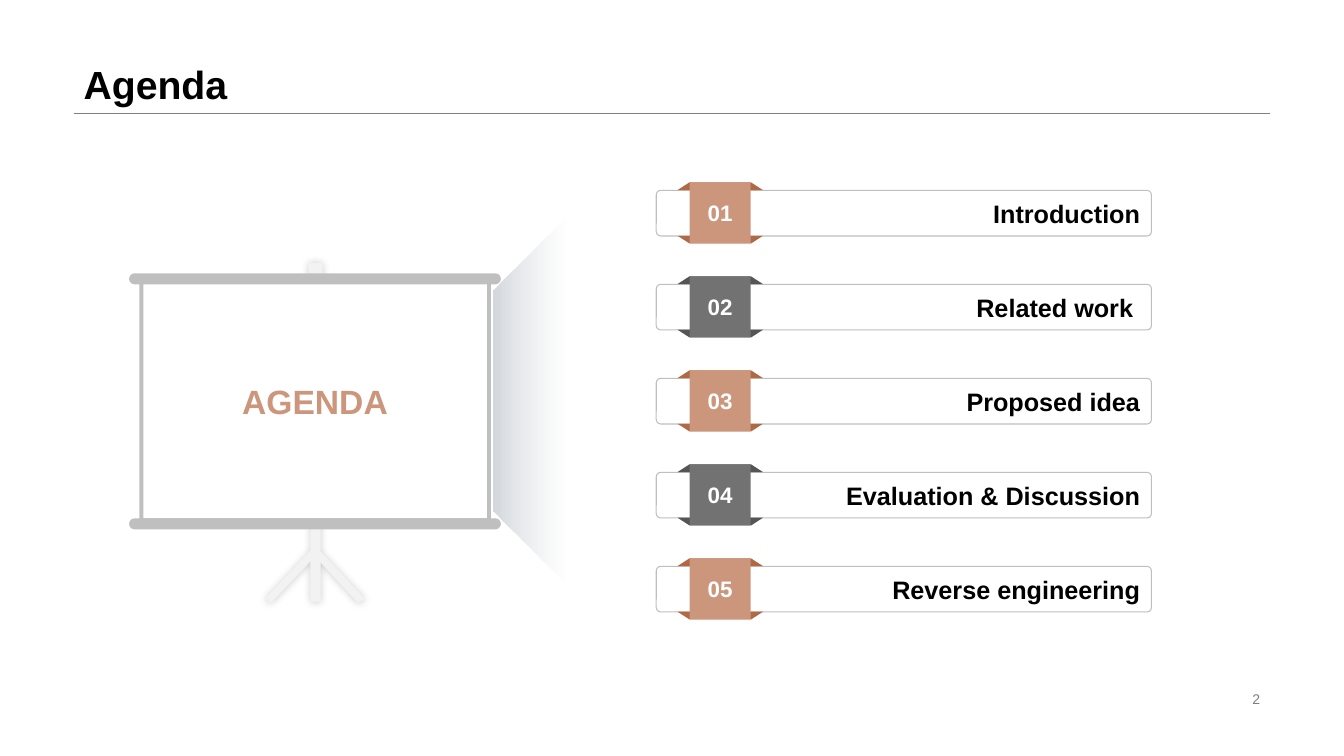
from dataclasses import dataclass

from lxml.etree import SubElement
from pptx import Presentation
from pptx.dml.color import RGBColor
from pptx.enum.shapes import MSO_CONNECTOR, MSO_SHAPE
from pptx.enum.text import MSO_ANCHOR, MSO_AUTO_SIZE, PP_ALIGN
from pptx.oxml.ns import qn
from pptx.util import Pt

FONT = "Arial"
ITEM_TOP, ITEM_PITCH = 130.3, 67.14
BADGE, FOLD_HEIGHT = 43.6, 5.5


@dataclass
class Palette:
    face: str
    fold: str


@dataclass
class Box:
    left: float
    top: float
    width: float
    height: float

    def lengths(self) -> tuple:
        return Pt(self.left), Pt(self.top), Pt(self.width), Pt(self.height)


COPPER = Palette("CC967C", "B16844")
GRAY = Palette("727272", "555555")
ITEMS = ["Introduction", "Related work ", "Proposed idea",
         "Evaluation & Discussion", "Reverse engineering"]

STAND_TOP = [(220.3, 187.9), (230.4, 187.9), (230.4, 201.6), (220.3, 201.6)]
STAND_LEGS = [(221.8, 357.8), (229, 357.8), (229, 393.8), (260.6, 427.7),
              (255.6, 430.6), (229, 401.8), (229, 429.8), (221.8, 429.8),
              (221.8, 401), (193.7, 430.6), (189.4, 427.7), (221.8, 393.1)]


def color(value: str) -> RGBColor:
    return RGBColor.from_string(value)


def add_shape(s, kind, box: Box, fill: str = "", line: str = "", adj=None, rotation: float = 0):
    sp = s.shapes.add_shape(kind, *box.lengths())
    sp.shadow.inherit = False
    sp.rotation = rotation
    if adj is not None:
        sp.adjustments[0] = adj
    if fill:
        sp.fill.solid()
        sp.fill.fore_color.rgb = color(fill)
    else:
        sp.fill.background()
    if line:
        sp.line.color.rgb = color(line)
        sp.line.width = Pt(0.75)
    else:
        sp.line.fill.background()
    return sp


def write(sp, text: str, size: float, ink: str, align, bold: bool = True,
          anchor=MSO_ANCHOR.MIDDLE):
    tf = sp.text_frame
    tf.word_wrap = True
    tf.auto_size = MSO_AUTO_SIZE.NONE
    tf.vertical_anchor = anchor
    tf.margin_left = tf.margin_right = Pt(7.2)
    tf.margin_top = tf.margin_bottom = Pt(3.6)
    p = tf.paragraphs[0]
    p.alignment = align
    r = p.add_run()
    r.text = text
    r.font.name = FONT
    r.font.size = Pt(size)
    r.font.bold = bold
    r.font.color.rgb = color(ink)
    return p


def add_text(s, box: Box, text: str, size: float, ink: str, align, bold: bool = True) -> None:
    write(s.shapes.add_textbox(*box.lengths()), text, size, ink, align, bold)


def add_header(s) -> None:
    title = s.shapes.title
    title.left, title.top, title.width, title.height = Box(52.56, 0, 854.64, 80.64).lengths()
    p = write(title, "Agenda", 28, "000000", PP_ALIGN.LEFT, anchor=MSO_ANCHOR.BOTTOM)
    p.line_spacing = 0.9
    rule = s.shapes.add_connector(MSO_CONNECTOR.STRAIGHT, Pt(52.56), Pt(80.9), Pt(907.2), Pt(80.9))
    rule.line.color.rgb = color("7F7F7F")
    rule.line.width = Pt(0.75)
    SubElement(rule._element.spPr, qn("a:effectLst"))


def add_light(s) -> None:
    sp = add_shape(s, MSO_SHAPE.TRAPEZOID, Box(247.7, 260.6, 261.4, 51.1), adj=1.013, rotation=270)
    sp.fill.gradient()
    sp.fill.gradient_angle = 270
    near, far = sp.fill.gradient_stops
    near.position, far.position = 0, 1
    near.color.rgb = color("D4D8DD")
    far.color.rgb = color("E4E6EA")
    far_rgb = sp._element.spPr.findall(".//" + qn("a:srgbClr"))[-1]
    SubElement(far_rgb, qn("a:alpha"), val="0")


def add_stand(s) -> None:
    top = [(Pt(x), Pt(y)) for x, y in STAND_TOP]
    legs = [(Pt(x), Pt(y)) for x, y in STAND_LEGS]
    builder = s.shapes.build_freeform(*top[0])
    builder.add_line_segments(top[1:])
    builder.move_to(*legs[0])
    builder.add_line_segments(legs[1:])
    sp = builder.convert_to_shape()
    sp.fill.solid()
    sp.fill.fore_color.rgb = color("F2F2F2")
    sp.line.fill.background()
    sp.shadow.inherit = False
    effects = sp._element.spPr.find(qn("a:effectLst"))
    shadow = SubElement(effects, qn("a:outerShdw"), blurRad=str(Pt(6)), dist="0", dir="0",
                        algn="ctr", rotWithShape="0")
    rgb = SubElement(shadow, qn("a:srgbClr"), val="000000")
    SubElement(rgb, qn("a:alpha"), val="20000")


def add_board(s) -> None:
    add_light(s)
    add_stand(s)
    add_shape(s, MSO_SHAPE.RECTANGLE, Box(99.6, 200, 251, 174), "BFBFBF")
    add_shape(s, MSO_SHAPE.RECTANGLE, Box(102.4, 203, 245.4, 167.2), "FFFFFF")
    for top in (195.2, 370.2):
        add_shape(s, MSO_SHAPE.ROUNDED_RECTANGLE, Box(92.2, top, 265.6, 7.9), "BFBFBF", adj=0.5)
    add_text(s, Box(130.3, 262.8, 189.4, 46.8), "AGENDA", 24, COPPER.face, PP_ALIGN.CENTER)


def add_item(s, index: int, text: str) -> None:
    palette = GRAY if index % 2 else COPPER
    top = ITEM_TOP + index * ITEM_PITCH
    bar = add_shape(s, MSO_SHAPE.ROUNDED_RECTANGLE, Box(468.8, top + 5.7, 353.7, 32.6),
                    line="BFBFBF", adj=0.098)
    write(bar, text, 18, "000000", PP_ALIGN.RIGHT)
    for fold_top, rotation in ((top + BADGE - FOLD_HEIGHT, 180), (top, 0)):
        add_shape(s, MSO_SHAPE.TRAPEZOID, Box(484, fold_top, 61, FOLD_HEIGHT),
                  palette.fold, adj=1.546, rotation=rotation)
    badge = add_shape(s, MSO_SHAPE.RECTANGLE, Box(492.6, top, BADGE, BADGE), palette.face)
    write(badge, f"{index + 1:02}", 16, "FFFFFF", PP_ALIGN.CENTER)


def main() -> None:
    prs = Presentation()
    prs.slide_width, prs.slide_height = Pt(960), Pt(540)
    s = prs.slides.add_slide(prs.slide_layouts[5])
    add_header(s)
    add_text(s, Box(678.2, 491, 229, 16.6), "2", 10, "7F7F7F", PP_ALIGN.RIGHT, bold=False)
    add_board(s)
    for index, text in enumerate(ITEMS):
        add_item(s, index, text)
    prs.save("out.pptx")


if __name__ == "__main__":
    main()
